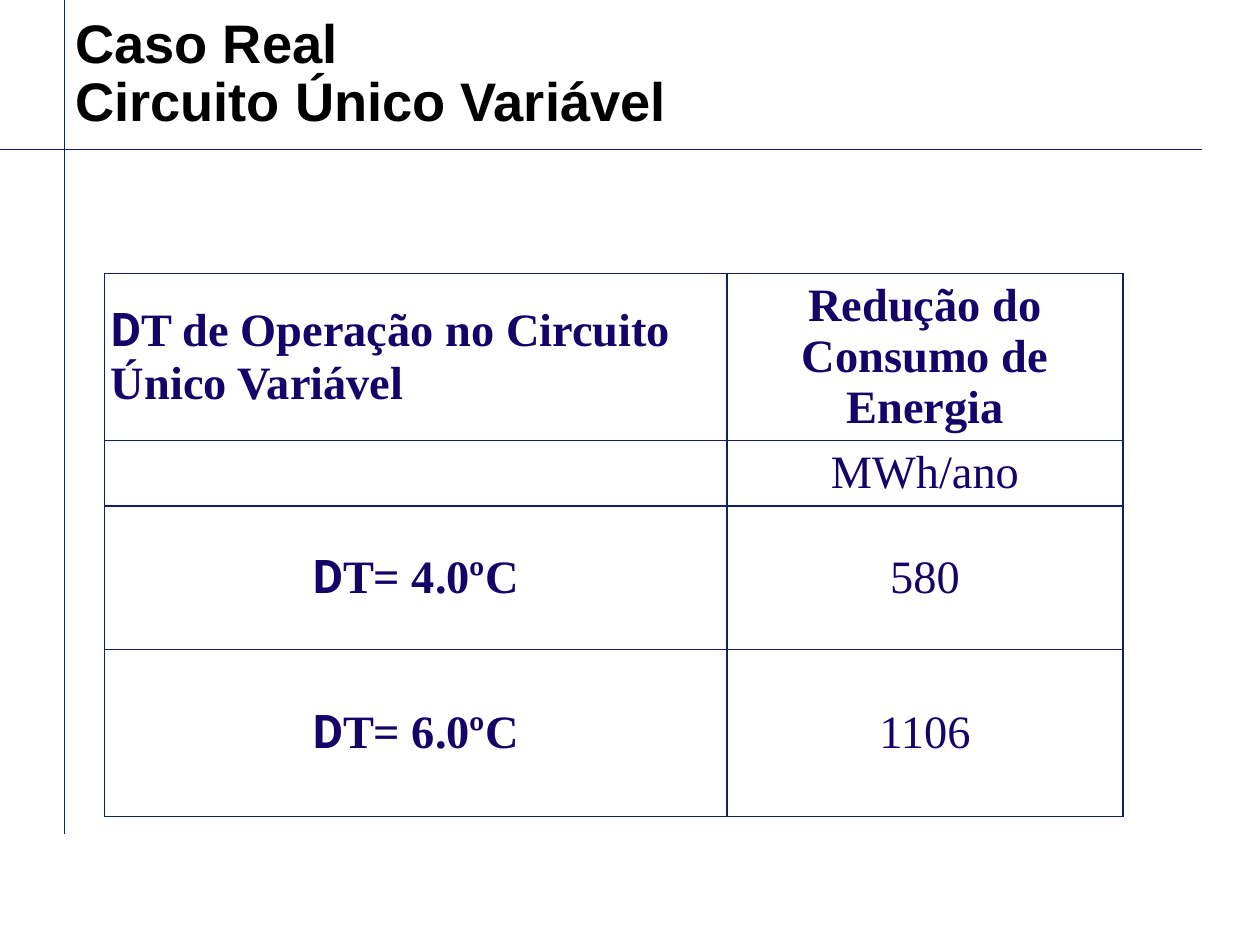
from lxml import etree
from pptx import Presentation
from pptx.dml.color import RGBColor
from pptx.enum import shapes, text
from pptx.oxml import ns
from pptx.util import Pt

THEME = {
    "rule": "0F245F", "title": "000000", "body": "13046A", "paper": "FFFFFF",
    "title_size": 31, "body_size": 26.5,
    "title_font": "Arial", "body_font": "Times New Roman", "delta_font": "Roboto",
}
LEFT, CENTER = text.PP_ALIGN.LEFT, text.PP_ALIGN.CENTER

TITLE = ["Caso Real", "Circuito Único Variável"]
# Each cell: paragraphs, bold, alignment; a leading "D" stands for delta.
ROWS = [
    [(["DT de Operação no Circuito Único Variável"], True, LEFT),
     (["Redução do", "Consumo de Energia"], True, CENTER)],
    [([], False, LEFT), (["MWh/ano"], False, CENTER)],
    [(["DT= 4.0ºC"], True, CENTER), (["580"], False, CENTER)],
    [(["DT= 6.0ºC"], True, CENTER), (["1106"], False, CENTER)],
]
COLUMN_WIDTHS = [355.7, 226.1]
ROW_HEIGHTS = [91.4, 37.4, 82, 95.6]
TABLE_LEFT, TABLE_TOP = 59.8, 156.2
RULES = [(36.8, 476.6, 36.8, 0), (0, 85.6, 686.9, 85.6)]


def colour(name):
    return RGBColor.from_string(THEME[name])


def write(frame, lines, *, size, font, ink, bold=False, align=LEFT,
          spacing=None, delta_font=None):
    """Write one paragraph per line; delta_font sets a leading "D" apart."""
    frame.word_wrap = True
    for index, line in enumerate(lines):
        paragraph = frame.paragraphs[0] if index == 0 else frame.add_paragraph()
        paragraph.alignment = align
        if spacing:
            paragraph.line_spacing = spacing
        pieces = [(line, font)]
        if delta_font and line.startswith("DT"):
            pieces = [(line[0], delta_font), (line[1:], font)]
        for words, face in pieces:
            run = paragraph.add_run()
            run.text = words
            run.font.size, run.font.name, run.font.bold = Pt(size), face, bold
            run.font.color.rgb = colour(ink)


def add_rule(slide, ends):
    rule = slide.shapes.add_connector(
        shapes.MSO_CONNECTOR.STRAIGHT, *[Pt(value) for value in ends])
    rule.line.color.rgb = colour("rule")
    rule.line.width = Pt(0.75)
    etree.SubElement(rule._element.spPr, ns.qn("a:effectLst"))


def add_borders(cell):
    properties = cell._tc.get_or_add_tcPr()
    for side in ("lnL", "lnR", "lnT", "lnB"):
        border = etree.SubElement(properties, ns.qn(f"a:{side}"), w=str(Pt(1)))
        fill = etree.SubElement(border, ns.qn("a:solidFill"))
        etree.SubElement(fill, ns.qn("a:srgbClr"), val=THEME["rule"])


def add_title(slide):
    box = slide.shapes.add_textbox(Pt(36), Pt(7.9), Pt(550.8), Pt(72))
    box.text_frame.vertical_anchor = text.MSO_ANCHOR.BOTTOM
    write(box.text_frame, TITLE, size=THEME["title_size"],
          font=THEME["title_font"], ink="title", bold=True, spacing=0.9)


def add_savings_table(slide):
    table = slide.shapes.add_table(
        len(ROWS), len(COLUMN_WIDTHS), Pt(TABLE_LEFT), Pt(TABLE_TOP),
        Pt(sum(COLUMN_WIDTHS)), Pt(sum(ROW_HEIGHTS))).table
    table.first_row = table.horz_banding = False
    for column, width in zip(table.columns, COLUMN_WIDTHS):
        column.width = Pt(width)
    for row, height, contents in zip(table.rows, ROW_HEIGHTS, ROWS):
        row.height = Pt(height)
        for cell, (lines, bold, align) in zip(row.cells, contents):
            add_borders(cell)
            cell.fill.solid()
            cell.fill.fore_color.rgb = colour("paper")
            cell.vertical_anchor = text.MSO_ANCHOR.MIDDLE
            cell.margin_left = cell.margin_right = Pt(3.6)
            cell.margin_top = cell.margin_bottom = Pt(0)
            write(cell.text_frame, lines, size=THEME["body_size"],
                  font=THEME["body_font"], ink="body", bold=bold, align=align,
                  delta_font=THEME["delta_font"])


def main():
    deck = Presentation()
    deck.slide_width, deck.slide_height = Pt(720), Pt(540)
    slide = deck.slides.add_slide(deck.slide_layouts[6])
    slide.background.fill.solid()
    slide.background.fill.fore_color.rgb = colour("paper")
    for ends in RULES:
        add_rule(slide, ends)
    add_title(slide)
    add_savings_table(slide)
    deck.save("out.pptx")


if __name__ == "__main__":
    main()
